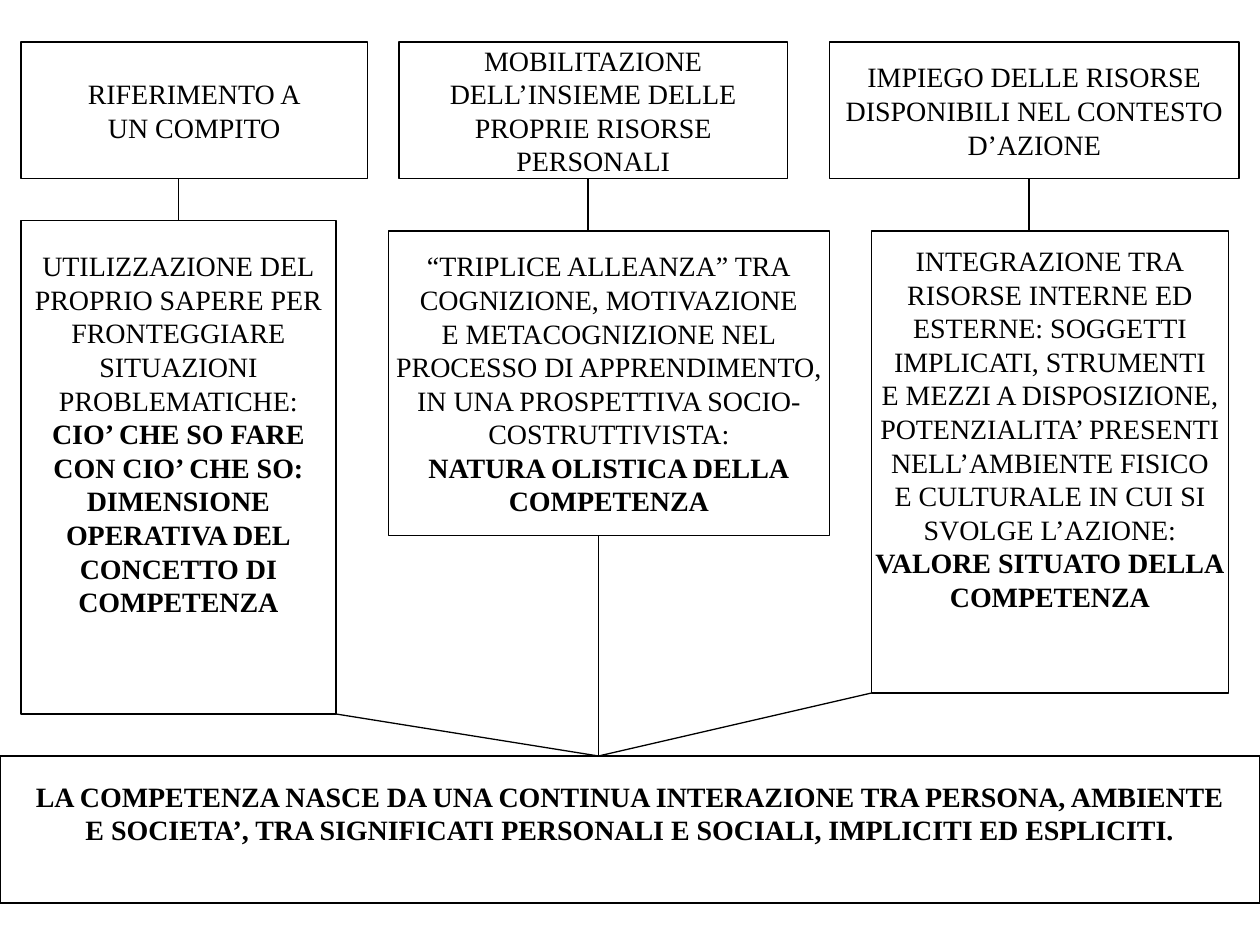
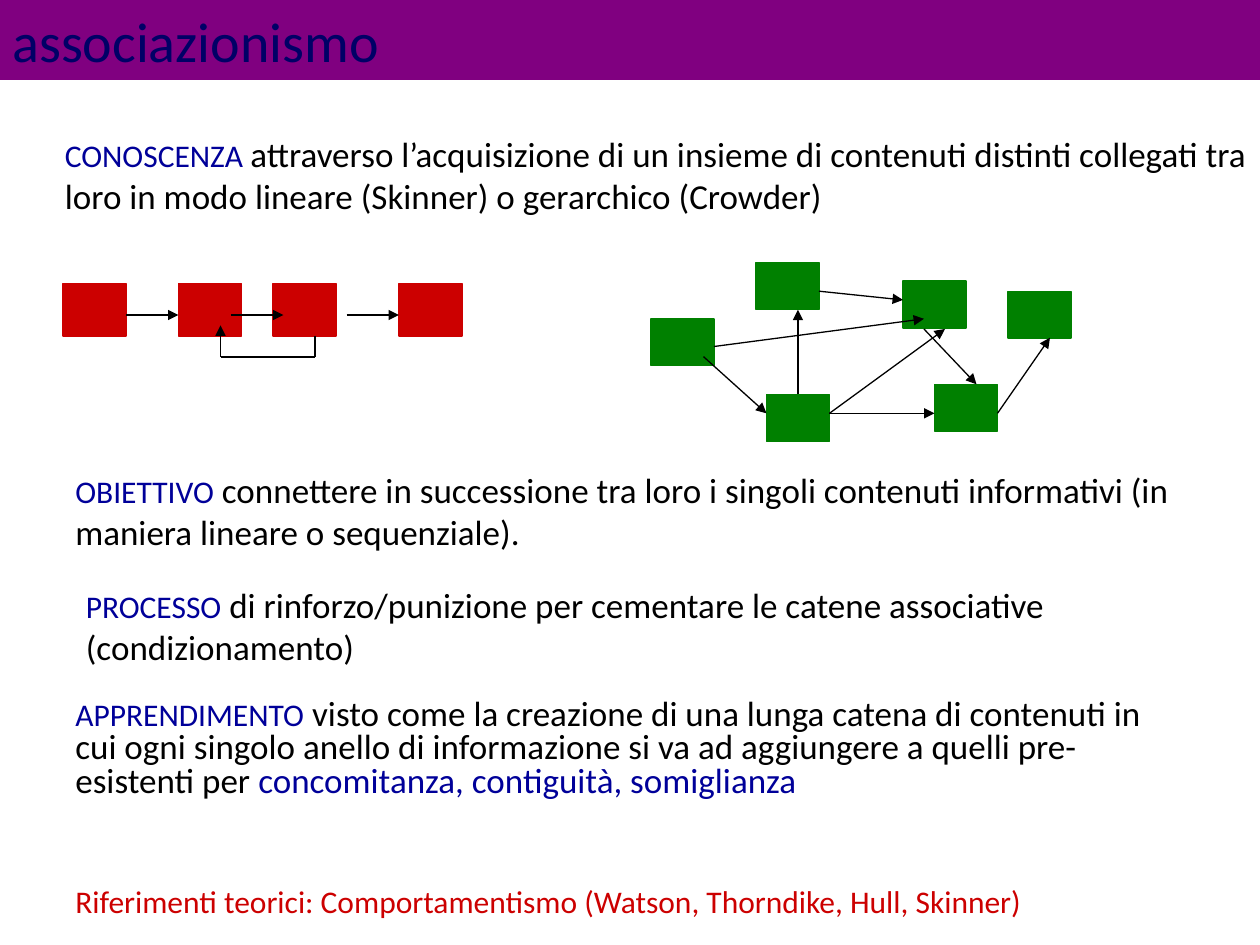
from dataclasses import dataclass

from lxml.etree import SubElement
from pptx import Presentation
from pptx.dml.color import RGBColor as Rgb
from pptx.enum.shapes import MSO_CONNECTOR as Link, MSO_SHAPE as Preset
from pptx.enum.text import MSO_ANCHOR as Anchor, PP_ALIGN as Align
from pptx.oxml.ns import qn
from pptx.util import Pt


@dataclass(frozen=True)
class Theme:
    """Colours, fonts and sizes shared by the slides."""
    ink: str = "000000"
    paper: str = "FFFFFF"
    band: str = "800080"
    title: str = "000066"
    keyword: str = "000099"
    linear: str = "CC0000"
    network: str = "008000"
    diagram_font: str = "Times New Roman"
    prose_font: str = "Calibri"
    title_size: float = 32
    prose_size: float = 20
    keyword_size: float = 18
    diagram_size: float = 16
    rule: float = 0.75


THEME = Theme()
INSET = 3.6

TASK = ("RIFERIMENTO A", "UN COMPITO")
MOBILISATION = ("MOBILITAZIONE", "DELL’INSIEME DELLE", "PROPRIE RISORSE", "PERSONALI")
RESOURCES = ("IMPIEGO DELLE RISORSE", "DISPONIBILI NEL CONTESTO", "D’AZIONE")
OPERATIVE = ("UTILIZZAZIONE DEL", "PROPRIO SAPERE PER", "FRONTEGGIARE", "SITUAZIONI",
             "PROBLEMATICHE:")
OPERATIVE_CLAIM = ("CIO’ CHE SO FARE", "CON CIO’ CHE SO:", "DIMENSIONE",
                   "OPERATIVA DEL", "CONCETTO DI", "COMPETENZA")
HOLISTIC = ("“TRIPLICE ALLEANZA” TRA", "COGNIZIONE, MOTIVAZIONE",
            "E METACOGNIZIONE NEL", "PROCESSO DI APPRENDIMENTO,",
            "IN UNA PROSPETTIVA SOCIO-", "COSTRUTTIVISTA:")
HOLISTIC_CLAIM = ("NATURA OLISTICA DELLA", "COMPETENZA")
SITUATED = ("INTEGRAZIONE TRA", "RISORSE INTERNE ED", "ESTERNE: SOGGETTI",
            "IMPLICATI, STRUMENTI", "E MEZZI A DISPOSIZIONE,",
            "POTENZIALITA’ PRESENTI", "NELL’AMBIENTE FISICO",
            "E CULTURALE IN CUI SI", "SVOLGE L’AZIONE:")
SITUATED_CLAIM = ("VALORE SITUATO DELLA", "COMPETENZA")
CONCLUSION = ("LA COMPETENZA NASCE DA UNA CONTINUA INTERAZIONE TRA PERSONA, AMBIENTE",
              "E SOCIETA’, TRA SIGNIFICATI PERSONALI E SOCIALI, IMPLICITI ED ESPLICITI.")


def style_font(font, name, size, colour, bold=False):
    """Set the face, size, colour and weight of a font."""
    font.name, font.size, font.bold = name, Pt(size), bold
    font.color.rgb = Rgb.from_string(colour)


def add_block(shapes, left, top, width, height, fill, outline=None):
    """Add a flat rectangle, outlined if a colour is given."""
    block = shapes.add_shape(Preset.RECTANGLE, Pt(left), Pt(top), Pt(width), Pt(height))
    block.shadow.inherit = False
    block.fill.solid()
    block.fill.fore_color.rgb = Rgb.from_string(fill)
    if outline:
        block.line.color.rgb = Rgb.from_string(outline)
        block.line.width = Pt(THEME.rule)
    else:
        block.line.fill.background()
    return block


def add_concept(shapes, bounds, plain=(), claim=(), raised_lines=0):
    """Add a framed concept whose claim is bold, lifted by some line heights."""
    concept = add_block(shapes, *bounds, THEME.paper, THEME.ink)
    frame = concept.text_frame
    frame.word_wrap = False
    frame.vertical_anchor = Anchor.MIDDLE
    frame.margin_bottom = Pt(INSET + raised_lines * THEME.diagram_size * 1.2)
    frame.text = "\n".join((*plain, *claim))
    for index, line in enumerate(frame.paragraphs):
        line.alignment = Align.CENTER
        style_font(line.font, THEME.diagram_font, THEME.diagram_size, THEME.ink,
                   bold=index >= len(plain))
    return concept


def add_link(shapes, start, end, arrow=False):
    """Add a straight black link, with an arrowhead at its end if asked."""
    link = shapes.add_connector(Link.STRAIGHT, *map(Pt, (*start, *end)))
    link.line.color.rgb = Rgb.from_string(THEME.ink)
    link.line.width = Pt(THEME.rule)
    if arrow:
        SubElement(link.line._get_or_add_ln(), qn("a:tailEnd"), type="triangle")
    SubElement(link._element.spPr, qn("a:effectLst"))
    return link


def add_title_band(shapes, title):
    """Add the coloured band with the slide title."""
    band = add_block(shapes, 0, 0, 720, 45.6, THEME.band)
    frame = band.text_frame
    frame.vertical_anchor = Anchor.TOP
    frame.text = title
    heading = frame.paragraphs[0]
    heading.alignment = Align.LEFT
    style_font(heading.font, THEME.prose_font, THEME.title_size, THEME.title)


def add_prose(shapes, bounds, *pieces, spacing=None, top_inset=INSET):
    """Add a wrapped paragraph of (text, size, colour) pieces."""
    frame = shapes.add_textbox(*map(Pt, bounds)).text_frame
    frame.word_wrap = True
    frame.margin_top = Pt(top_inset)
    sentence = frame.paragraphs[0]
    sentence.line_spacing = spacing
    for text, size, colour in pieces:
        run = sentence.add_run()
        run.text = text
        style_font(run.font, THEME.prose_font, size, colour)


def keyword(text):
    """Return the piece that opens a statement."""
    return text, THEME.keyword_size, THEME.keyword


def prose(text, colour=THEME.ink):
    """Return a piece of running text."""
    return text, THEME.prose_size, colour


def add_linear_chain(slide):
    """Draw the chain of contents with its step back."""
    chain = slide.shapes.add_group_shape().shapes
    for left in (36, 102, 156, 228):
        add_block(chain, left, 162, 36, 30, THEME.linear, THEME.linear)
    for start in (72, 132, 198):
        add_link(chain, (start, 180), (start + 30, 180), arrow=True)
    way_back = [(180, 192), (180, 204), (126, 204), (126, 186)]
    for start, end in zip(way_back, way_back[1:]):
        add_link(chain, start, end, arrow=end == way_back[-1])


def add_network(slide):
    """Draw the hierarchical network of contents."""
    network = slide.shapes.add_group_shape().shapes
    corners = [(372, 182.2), (432, 150), (516, 160.6), (576, 166.4), (534, 219.6),
               (438, 225.4)]
    nodes = [add_block(network, *corner, 36, 26.8, THEME.network, THEME.network)
             for corner in corners]
    for start, end in [((408, 198), (528, 182.2)), ((468, 166.4), (516, 171.4)),
                       ((528, 188), (558, 219.6)), ((474, 236.2), (534, 236.2)),
                       ((402, 203.8), (438, 236.2)), ((474, 236.2), (540, 188)),
                       ((570, 236.2), (600, 193))]:
        add_link(network, start, end, arrow=True)
    rising = add_link(network, (456, 225.4), (456, 177), arrow=True)
    rising.begin_connect(nodes[-1], 0)


def build_competence(slide):
    """Build the map of the three dimensions of competence."""
    shapes = slide.shapes
    for left, width, lines in [(12, 198, TASK), (228, 222, MOBILISATION),
                               (474, 234, RESOURCES)]:
        add_concept(shapes, (left, 24, width, 78), lines)
    operative = add_concept(shapes, (12, 126, 180, 282), OPERATIVE, OPERATIVE_CLAIM, 2)
    add_concept(shapes, (222, 132, 252, 174), HOLISTIC, HOLISTIC_CLAIM)
    add_concept(shapes, (498, 132, 204, 264), SITUATED, SITUATED_CLAIM, 2)
    add_concept(shapes, (0, 432, 720, 84), claim=CONCLUSION, raised_lines=1)
    add_link(shapes, (102, 102), (102, 126)).end_connect(operative, 0)
    for across in (336, 588):
        add_link(shapes, (across, 102), (across, 132))
    for start in [(192, 408), (342, 306), (498, 396)]:
        add_link(shapes, start, (342, 432))


def build_associationism(slide):
    """Build the account of associationism."""
    shapes = slide.shapes
    add_title_band(shapes, "associazionismo")
    add_prose(shapes, (30, 72, 690, 55.4), keyword("CONOSCENZA "),
              prose("attraverso l’acquisizione di un insieme di contenuti distinti "
                    "collegati tra loro in modo lineare (Skinner) o gerarchico (Crowder)"))
    add_linear_chain(slide)
    add_network(slide)
    add_prose(shapes, (36, 264, 642, 55.4), keyword("OBIETTIVO"),
              prose(" connettere in successione tra loro i singoli contenuti "
                    "informativi (in maniera lineare o sequenziale)."))
    add_prose(shapes, (42, 330, 642, 55.4), keyword("PROCESSO"),
              prose(" di rinforzo/punizione per cementare le catene associative "
                    "(condizionamento)"))
    add_prose(shapes, (36, 396, 648, 64.8), keyword("APPRENDIMENTO"),
              prose(" visto come la creazione di una lunga catena di contenuti in cui "
                    "ogni singolo anello di informazione si va ad aggiungere a quelli "
                    "pre-esistenti per "),
              prose("concomitanza, contiguità, somiglianza", THEME.keyword), spacing=0.8)
    add_prose(shapes, (36, 478, 647, 62),
              ("Riferimenti teorici: Comportamentismo (Watson, Thorndike, Hull, Skinner)",
               THEME.keyword_size, THEME.linear), top_inset=26)


def main():
    """Build and save the presentation."""
    deck = Presentation()
    deck.slide_width, deck.slide_height = Pt(720), Pt(540)
    blank = deck.slide_layouts[6]
    for build in (build_competence, build_associationism):
        build(deck.slides.add_slide(blank))
    deck.save("out.pptx")


if __name__ == "__main__":
    main()
